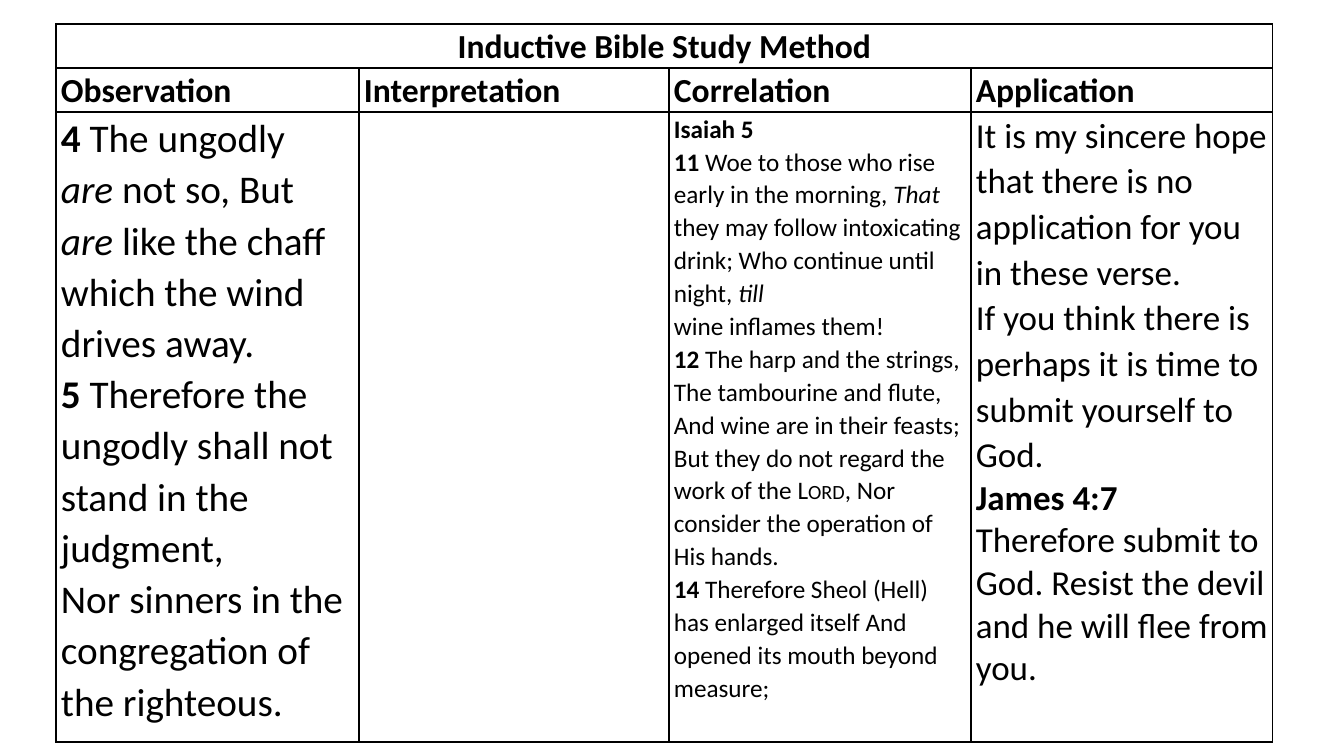
from dataclasses import dataclass

from lxml import etree
from pptx import Presentation
from pptx.dml.color import RGBColor
from pptx.enum.text import PP_ALIGN
from pptx.oxml.ns import qn
from pptx.util import Emu, Pt

CENTER, LEFT = PP_ALIGN.CENTER, PP_ALIGN.LEFT
PLAIN, BOLD, ITALIC, SMALL_CAPS = "plain", "bold", "italic", "small caps"
BLANK_LAYOUT = 6


@dataclass(frozen=True)
class Theme:
    font: str = "Calibri"
    ink: RGBColor = RGBColor(0, 0, 0)
    paper: RGBColor = RGBColor(255, 255, 255)
    heading: int = 24
    verse: int = 28
    reference: int = 18
    advice: int = 25
    spacing: float = 1.07
    border: int = 1


THEME = Theme()
LEFT_EDGE, TOP_EDGE = 56, 24
COLUMN_WIDTHS = [303, 310, 302, 302]
ROW_HEIGHTS = [44, 44, 630]
CELL_INSET = 5

TITLE = "Inductive Bible Study Method"
HEADINGS = ["Observation", "Interpretation", "Correlation", "Application"]
OBSERVATION = [
    [("4 ", BOLD), ("The ungodly", PLAIN)],
    [("are", ITALIC), (" not so, But", PLAIN)],
    [("are", ITALIC),
     (" like the chaff which the wind drives away.\n", PLAIN),
     ("5 ", BOLD),
     ("Therefore the ungodly shall not stand in the judgment,\n"
      "Nor sinners in the congregation of the righteous.", PLAIN)],
]
CORRELATION = [
    [("Isaiah 5", BOLD)],
    [("11 ", BOLD), ("Woe to those who rise early in the morning, ", PLAIN),
     ("That", ITALIC),
     (" they may follow intoxicating drink; Who continue until night, ", PLAIN),
     ("till", ITALIC)],
    [("wine inflames them!\n", PLAIN), ("12 ", BOLD),
     ("The harp and the strings,\nThe tambourine and flute,\n"
      "And wine are in their feasts;\n"
      "But they do not regard the work of the ", PLAIN),
     ("Lord", SMALL_CAPS),
     (", Nor consider the operation of His hands.", PLAIN)],
    [("14 ", BOLD),
     ("Therefore Sheol (Hell) has enlarged itself And "
      "opened its mouth beyond measure;", PLAIN)],
]
ADVICE = [
    [("It is my sincere hope that there is no application for you "
      "in these verse.", PLAIN)],
    [("If you think there is perhaps it is time to submit yourself "
      "to God.", PLAIN)],
]
JAMES = [
    [("James 4:7", BOLD)],
    [("Therefore submit to God. Resist the devil and he will flee "
      "from you.", PLAIN)],
]


def px(length):
    return Emu(round(length * 914400 / 100.8))


def add_span(para, text, style, size):
    span = para.add_run()
    span.text = text
    font = span.font
    font.name, font.size = THEME.font, Pt(size)
    font.bold, font.italic = style == BOLD, style == ITALIC
    font.color.rgb = THEME.ink
    if style == SMALL_CAPS:
        span._r.get_or_add_rPr().set("cap", "small")


def write_paragraphs(cell, paragraphs, size, align=LEFT, spacing=THEME.spacing):
    """Append paragraphs of (text, style) spans; a newline is a line break."""
    frame = cell.text_frame
    for spans in paragraphs:
        para = frame.add_paragraph() if frame.text else frame.paragraphs[0]
        para.alignment, para.line_spacing = align, spacing
        for text, style in spans:
            for index, line in enumerate(text.split("\n")):
                if index:
                    para.add_line_break()
                if line:
                    add_span(para, line, style, size)


def style_cell(cell):
    cell.margin_left = cell.margin_right = px(CELL_INSET)
    cell.margin_top = cell.margin_bottom = 0
    properties = cell._tc.get_or_add_tcPr()
    for side in ("a:lnL", "a:lnR", "a:lnT", "a:lnB"):
        line = etree.SubElement(properties, qn(side), w=str(Pt(THEME.border)))
        fill = etree.SubElement(line, qn("a:solidFill"))
        etree.SubElement(fill, qn("a:srgbClr"), val=str(THEME.ink))
    cell.fill.solid()
    cell.fill.fore_color.rgb = THEME.paper


def add_study_table(page):
    table = page.shapes.add_table(
        len(ROW_HEIGHTS), len(COLUMN_WIDTHS), px(LEFT_EDGE), px(TOP_EDGE),
        px(sum(COLUMN_WIDTHS)), px(sum(ROW_HEIGHTS))).table
    table.first_row = table.horz_banding = False
    for column, width in zip(table.columns, COLUMN_WIDTHS):
        column.width = px(width)
    for row, height in zip(table.rows, ROW_HEIGHTS):
        row.height = px(height)
    for cell in table.iter_cells():
        style_cell(cell)
    table.cell(0, 0).merge(table.cell(0, len(COLUMN_WIDTHS) - 1))
    return table


def main():
    deck = Presentation()
    deck.slide_width, deck.slide_height = px(1344), px(756)
    page = deck.slides.add_slide(deck.slide_layouts[BLANK_LAYOUT])
    table = add_study_table(page)

    write_paragraphs(table.cell(0, 0), [[(TITLE, BOLD)]], THEME.heading, CENTER)
    for column, heading in enumerate(HEADINGS):
        write_paragraphs(table.cell(1, column), [[(heading, BOLD)]], THEME.heading)
    write_paragraphs(table.cell(2, 0), OBSERVATION, THEME.verse)
    write_paragraphs(table.cell(2, 2), CORRELATION, THEME.reference)
    application = table.cell(2, 3)
    write_paragraphs(application, ADVICE, THEME.advice)
    write_paragraphs(application, JAMES, THEME.advice, spacing=1.0)
    deck.save("out.pptx")


if __name__ == "__main__":
    main()
